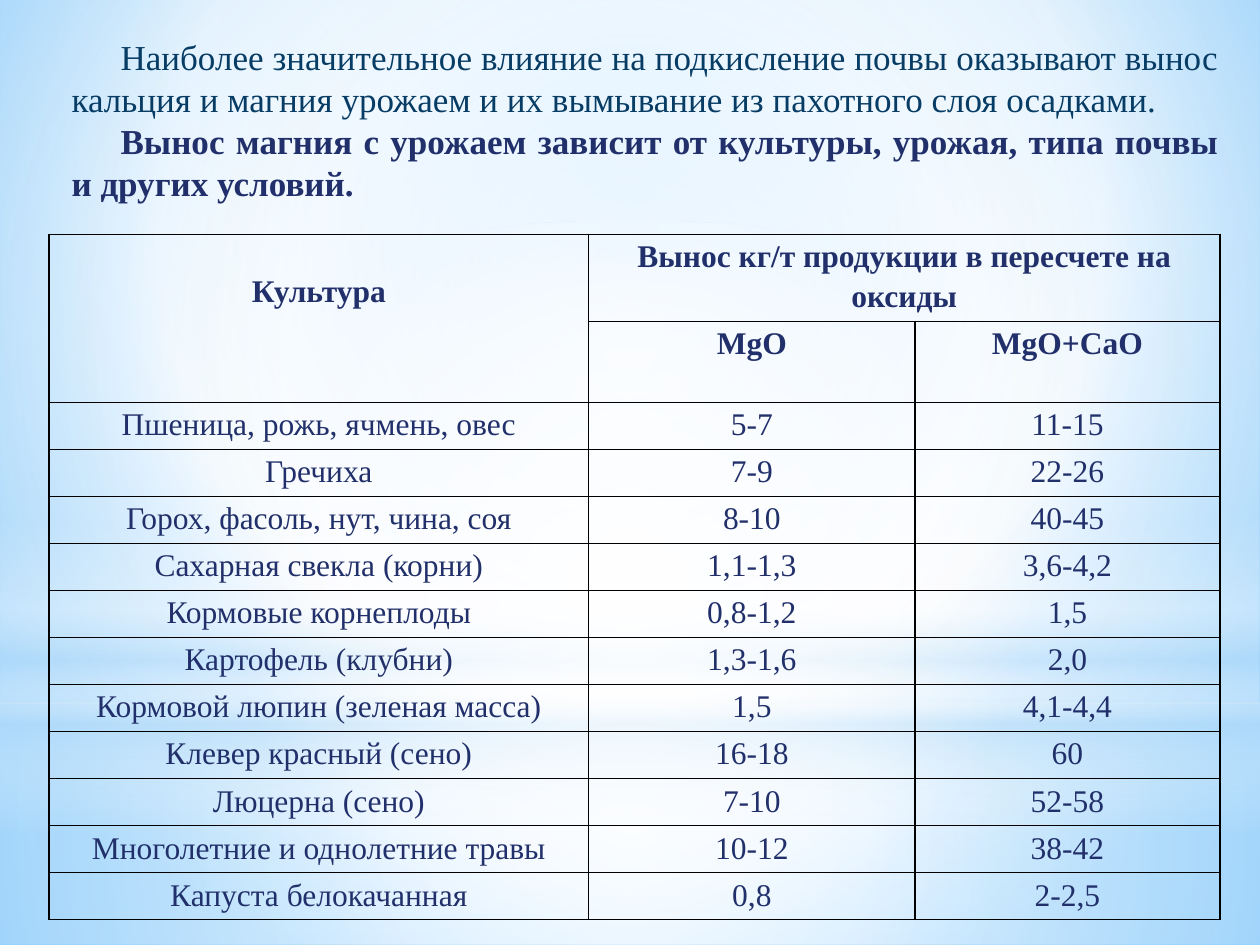
from dataclasses import dataclass

from lxml import etree
from pptx import Presentation
from pptx.dml.color import RGBColor
from pptx.enum.shapes import MSO_SHAPE
from pptx.enum.text import MSO_ANCHOR, PP_ALIGN
from pptx.oxml.ns import qn
from pptx.util import Pt

RECTANGLE, OVAL = MSO_SHAPE.RECTANGLE, MSO_SHAPE.OVAL
CENTER, JUSTIFY = PP_ALIGN.CENTER, PP_ALIGN.JUSTIFY
TOP = MSO_ANCHOR.TOP


@dataclass(frozen=True)
class Theme:
    font: str = "Times New Roman"
    intro_size: float = 20
    table_size: float = 18
    intro: str = "073C65"
    ink: str = "21306A"
    border: str = "000000"
    white: str = "FFFFFF"
    haze: str = "B4DCFA"
    sky: str = "9ED5FF"
    deep_sky: str = "5BB9FF"


THEME = Theme()

# Content
INTRO = [
    ("Наиболее значительное влияние на подкисление почвы оказывают вынос "
     "кальция и магния урожаем и их вымывание из пахотного слоя осадками.",
     THEME.intro, False),
    ("Вынос магния с урожаем зависит от культуры, урожая, типа почвы "
     "и других условий.", THEME.ink, True),
]
HEADER = [
    ("Культура", "Вынос кг/т продукции в пересчете на оксиды", ""),
    ("", "MgO", "MgO+CaO"),
]
CROPS = [
    ("Пшеница, рожь, ячмень, овес", "5-7", "11-15"),
    ("Гречиха", "7-9", "22-26"),
    ("Горох, фасоль, нут, чина, соя", "8-10", "40-45"),
    ("Сахарная свекла (корни)", "1,1-1,3", "3,6-4,2"),
    ("Кормовые корнеплоды", "0,8-1,2", "1,5"),
    ("Картофель (клубни)", "1,3-1,6", "2,0"),
    ("Кормовой люпин (зеленая масса)", "1,5", "4,1-4,4"),
    ("Клевер красный (сено)", "16-18", "60"),
    ("Люцерна (сено)", "7-10", "52-58"),
    ("Многолетние и однолетние травы", "10-12", "38-42"),
    ("Капуста белокачанная", "0,8", "2-2,5"),
]

# Gradients: stops are (position, colour, opacity), all in percent
MIDDLE = (50, 50, 50, 50)
SKY_STOPS = [(0, THEME.sky, 100), (60, THEME.white, 100), (100, THEME.deep_sky, 100)]
SKY_FOCUS = (20, 10, 20, 60)
# Each glow: preset, top, height, stops, focus (None for a vertical gradient)
GLOWS = [
    (RECTANGLE, 401.76, 138.24,
     [(0, THEME.white, 91), (37, THEME.white, 76), (100, THEME.haze, 79)], MIDDLE),
    (RECTANGLE, 0, 401.76,
     [(0, THEME.white, 89), (48, THEME.white, 62), (100, THEME.haze, 79)], MIDDLE),
    (RECTANGLE, 296.64, 180,
     [(0, THEME.white, 0), (29, THEME.white, 30), (45, THEME.haze, 40),
      (55, THEME.white, 26), (65, THEME.haze, 60), (100, THEME.white, 0)], None),
    (OVAL, 126, 401.76, [(0, THEME.white, 100), (56, THEME.white, 0)], MIDDLE),
]

# Layout, in points
PAGE_WIDTH, PAGE_HEIGHT = 720, 540
INTRO_BOX = (33.84, 16.56, 669.6, 104.4)
INTRO_INDENT = 28
TABLE_LEFT, TABLE_TOP = 28, 134
COLUMN_WIDTHS = (308.4, 186.5, 174.2)
HEADER_HEIGHTS = (49.7, 46.3)
CROP_HEIGHT = 26.9
CELL_INSET = 5
CROP_TITLE_DROP = 20


def add_text(para, text, size, color, bold=False, align=CENTER, spacing=None):
    para.alignment = align
    if spacing:
        para.line_spacing = spacing
    span = para.add_run()
    span.text = text
    span.font.name = THEME.font
    span.font.size = Pt(size)
    span.font.bold = bold
    span.font.color.rgb = RGBColor.from_string(color)


def set_gradient(fill, element, stops, focus):
    fill.gradient()
    gradient = element.find(".//" + qn("a:gradFill"))
    for child in list(gradient):
        gradient.remove(child)
    stop_list = etree.SubElement(gradient, qn("a:gsLst"))
    for position, color, opacity in stops:
        stop = etree.SubElement(stop_list, qn("a:gs"), pos=str(position * 1000))
        tint = etree.SubElement(stop, qn("a:srgbClr"), val=color)
        if opacity < 100:
            etree.SubElement(tint, qn("a:alpha"), val=str(opacity * 1000))
    if focus:
        circle = etree.SubElement(gradient, qn("a:path"))
        circle.set("path", "circle")
        sides = {side: str(value * 1000) for side, value in zip("ltrb", focus)}
        etree.SubElement(circle, qn("a:fillToRect"), sides)
    else:
        etree.SubElement(gradient, qn("a:lin"), ang="5400000", scaled="0")


def set_borders(cell):
    properties = cell._tc.get_or_add_tcPr()
    for index, side in enumerate(("lnL", "lnR", "lnT", "lnB")):
        line = etree.Element(qn("a:" + side), w=str(Pt(1)))
        solid = etree.SubElement(line, qn("a:solidFill"))
        etree.SubElement(solid, qn("a:srgbClr"), val=THEME.border)
        properties.insert(index, line)


def add_background(page):
    set_gradient(page.background.fill, page.element, SKY_STOPS, SKY_FOCUS)
    for preset, top, height, stops, focus in GLOWS:
        glow = page.shapes.add_shape(preset, 0, Pt(top), Pt(PAGE_WIDTH), Pt(height))
        glow.shadow.inherit = False
        glow.line.fill.background()
        set_gradient(glow.fill, glow.element, stops, focus)


def add_intro(page):
    box = page.shapes.add_textbox(*map(Pt, INTRO_BOX))
    frame = box.text_frame
    frame.word_wrap = True
    for index, (text, color, bold) in enumerate(INTRO):
        para = frame.add_paragraph() if index else frame.paragraphs[0]
        add_text(para, text, THEME.intro_size, color, bold=bold, align=JUSTIFY)
        para._p.get_or_add_pPr().set("indent", str(Pt(INTRO_INDENT)))


def add_crop_table(page):
    rows = HEADER + CROPS
    heights = list(HEADER_HEIGHTS) + [CROP_HEIGHT] * len(CROPS)
    table = page.shapes.add_table(
        len(rows), len(COLUMN_WIDTHS), Pt(TABLE_LEFT), Pt(TABLE_TOP),
        Pt(sum(COLUMN_WIDTHS)), Pt(sum(heights))).table
    table.first_row = table.horz_banding = False
    for column, width in zip(table.columns, COLUMN_WIDTHS):
        column.width = Pt(width)
    for row, height in zip(table.rows, heights):
        row.height = Pt(height)

    for row_index, values in enumerate(rows):
        for column_index, text in enumerate(values):
            cell = table.cell(row_index, column_index)
            cell.fill.background()
            set_borders(cell)
            cell.margin_left = cell.margin_right = Pt(CELL_INSET)
            cell.margin_top = cell.margin_bottom = 0
            cell.vertical_anchor = TOP
            if text:
                add_text(cell.text_frame.paragraphs[0], text, THEME.table_size,
                         THEME.ink, bold=row_index < len(HEADER), spacing=1.15)

    # Merged header cells
    table.cell(0, 0).merge(table.cell(1, 0))
    table.cell(0, 1).merge(table.cell(0, 2))
    table.cell(0, 0).margin_top = Pt(CROP_TITLE_DROP)


def main():
    deck = Presentation()
    deck.slide_width, deck.slide_height = Pt(PAGE_WIDTH), Pt(PAGE_HEIGHT)
    page = deck.slides.add_slide(deck.slide_layouts[6])
    add_background(page)
    add_intro(page)
    add_crop_table(page)
    deck.save("out.pptx")


if __name__ == "__main__":
    main()
